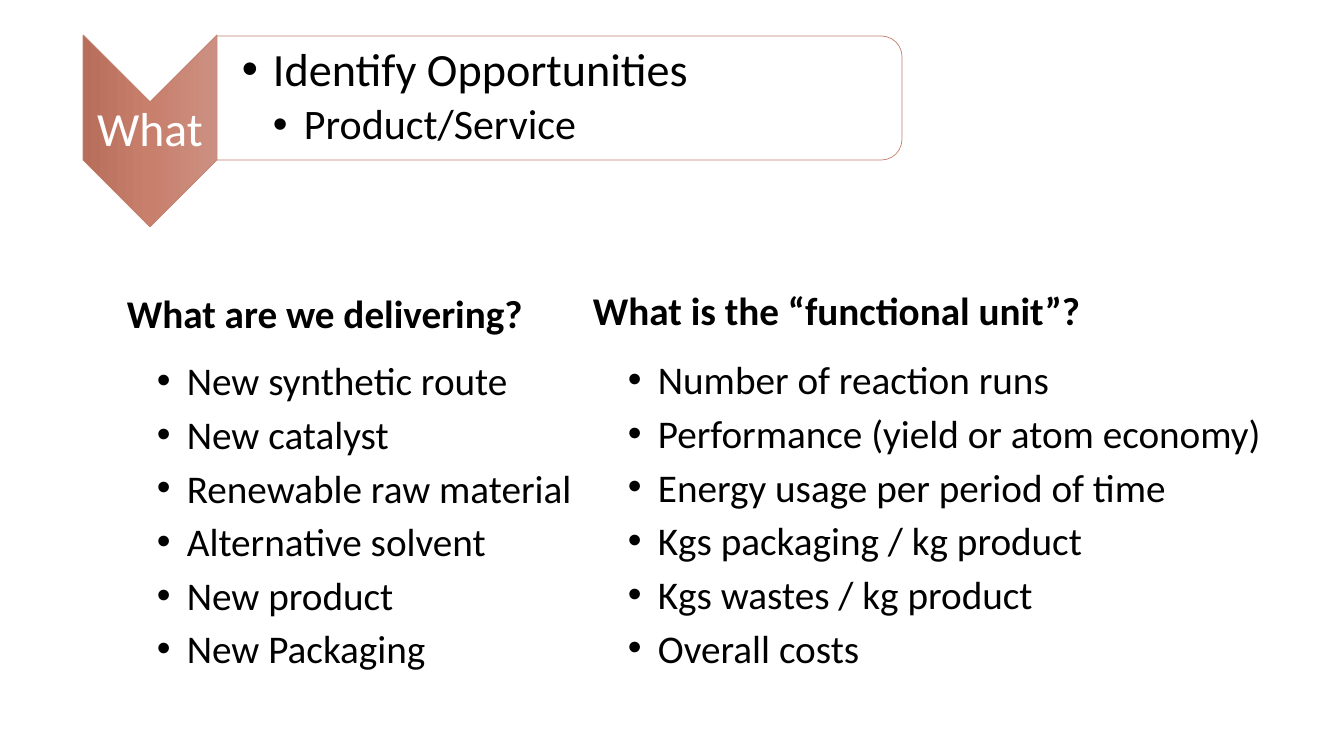
import pptx
import pptx.util
import pptx.dml.color
import pptx.enum.shapes
import pptx.enum.text
import pptx.oxml
import pptx.oxml.ns

PX = 12192000 / 1344
FONT = "Calibri"
BLACK, WHITE, EDGE = "000000", "FFFFFF", "C48170"
STOPS = [(0, "CB9082"), (50, "C87F6C"), (100, "B76E5B")]

BADGE = {"text": "What", "box": (83, 35, 134, 192), "label": (83, 103, 134, 57)}
BAR = {
    "box": (217, 36, 685, 124),
    "label": (217, 42, 678, 112),
    "lines": [("Identify Opportunities", 33, 31), ("Product/Service", 30, 62)],
}
TOPICS = [
    {
        "head": "What are we delivering?",
        "top": (117, 278, 419, 67),
        "list": (137, 345, 450, 332),
        "items": [
            "New synthetic route",
            "New catalyst",
            "Renewable raw material",
            "Alternative solvent",
            "New product",
            "New Packaging",
        ],
    },
    {
        "head": "What is the “functional unit”?",
        "top": (583, 275, 513, 61),
        "list": (608, 344, 670, 386),
        "items": [
            "Number of reaction runs",
            "Performance (yield or atom economy)",
            "Energy usage per period of time",
            "Kgs packaging / kg product",
            "Kgs wastes / kg product",
            "Overall costs",
        ],
    },
]


def emu(px):
    return pptx.util.Emu(round(px * PX))


def color(text):
    return pptx.dml.color.RGBColor.from_string(text)


def node(body):
    space = pptx.oxml.ns.nsdecls("a")
    return pptx.oxml.parse_xml(body.replace(">", f" {space}>", 1))


def turned(parent, kind, box):
    left, top, wide, high = box
    move = (wide - high) / 2
    place = (left + move, top - move, high, wide)
    shape = parent.shapes.add_shape(kind, *map(emu, place))
    shape.rotation = 90
    shape.shadow.inherit = False
    shape.line.color.rgb = color(EDGE)
    shape.line.width = pptx.util.Pt(0.5)
    return shape


def frame(parent, box, pads=None, middle=False):
    text = parent.shapes.add_textbox(*map(emu, box)).text_frame
    text.word_wrap = True
    if pads:
        text.margin_left, text.margin_top, text.margin_right, text.margin_bottom = map(emu, pads)
    if middle:
        text.vertical_anchor = pptx.enum.text.MSO_ANCHOR.MIDDLE
    return text


def write(text, first, words, size, tint=BLACK, bold=False, space=1.14, after=0, indent=None, hang=0):
    para = text.paragraphs[0] if first else text.add_paragraph()
    para.text = words
    if indent is not None:
        props = para._p.get_or_add_pPr()
        props.set("marL", str(emu(indent)))
        props.set("indent", str(-emu(hang)))
        props.append(node('<a:buFont typeface="Arial"></a:buFont>'))
        props.append(node('<a:buChar char="•"></a:buChar>'))
    para.line_spacing = space
    para.space_after = pptx.util.Pt(after)
    para.font.name = FONT
    para.font.size = pptx.util.Pt(size)
    para.font.bold = bold
    para.font.color.rgb = color(tint)
    return para


def banner(slide):
    kinds = pptx.enum.shapes.MSO_SHAPE
    group = slide.shapes.add_group_shape()
    badge = turned(group, kinds.CHEVRON, BADGE["box"])
    badge.fill.gradient()
    grad = badge._element.spPr.find(pptx.oxml.ns.qn("a:gradFill"))
    stops = "".join(
        f'<a:gs pos="{spot * 1000}"><a:srgbClr val="{tint}"/></a:gs>' for spot, tint in STOPS
    )
    grad.getparent().replace(grad, node(
        f'<a:gradFill rotWithShape="1"><a:gsLst>{stops}</a:gsLst><a:lin ang="5400000" scaled="0"/></a:gradFill>'
    ))
    text = frame(group, BADGE["label"], (2, 2, 2, 2), True)
    para = write(text, True, BADGE["text"], 34, WHITE, space=0.9)
    para.alignment = pptx.enum.text.PP_ALIGN.CENTER

    group = slide.shapes.add_group_shape()
    bar = turned(group, kinds.ROUND_2_SAME_RECTANGLE, BAR["box"])
    bar.fill.solid()
    bar.fill.fore_color.rgb = color(WHITE)
    tint = bar._element.spPr.find(pptx.oxml.ns.qn("a:solidFill"))[0]
    tint.append(node('<a:alpha val="90000"></a:alpha>'))
    text = frame(group, BAR["label"], (25, 2, 2, 2), True)
    for row, (words, size, indent) in enumerate(BAR["lines"]):
        para = write(text, row == 0, words, size, space=0.9, after=5, indent=indent, hang=31)
        para.level = row + 1


def main():
    deck = pptx.Presentation()
    deck.slide_width, deck.slide_height = emu(1344), emu(756)
    slide = deck.slides.add_slide(deck.slide_layouts[6])
    banner(slide)
    for topic in TOPICS:
        write(frame(slide, topic["top"]), True, topic["head"], 28, bold=True)
        text = frame(slide, topic["list"])
        for row, item in enumerate(topic["items"]):
            write(text, row == 0, item, 28, indent=40, hang=30)
    deck.save("out.pptx")


if __name__ == "__main__":
    main()
